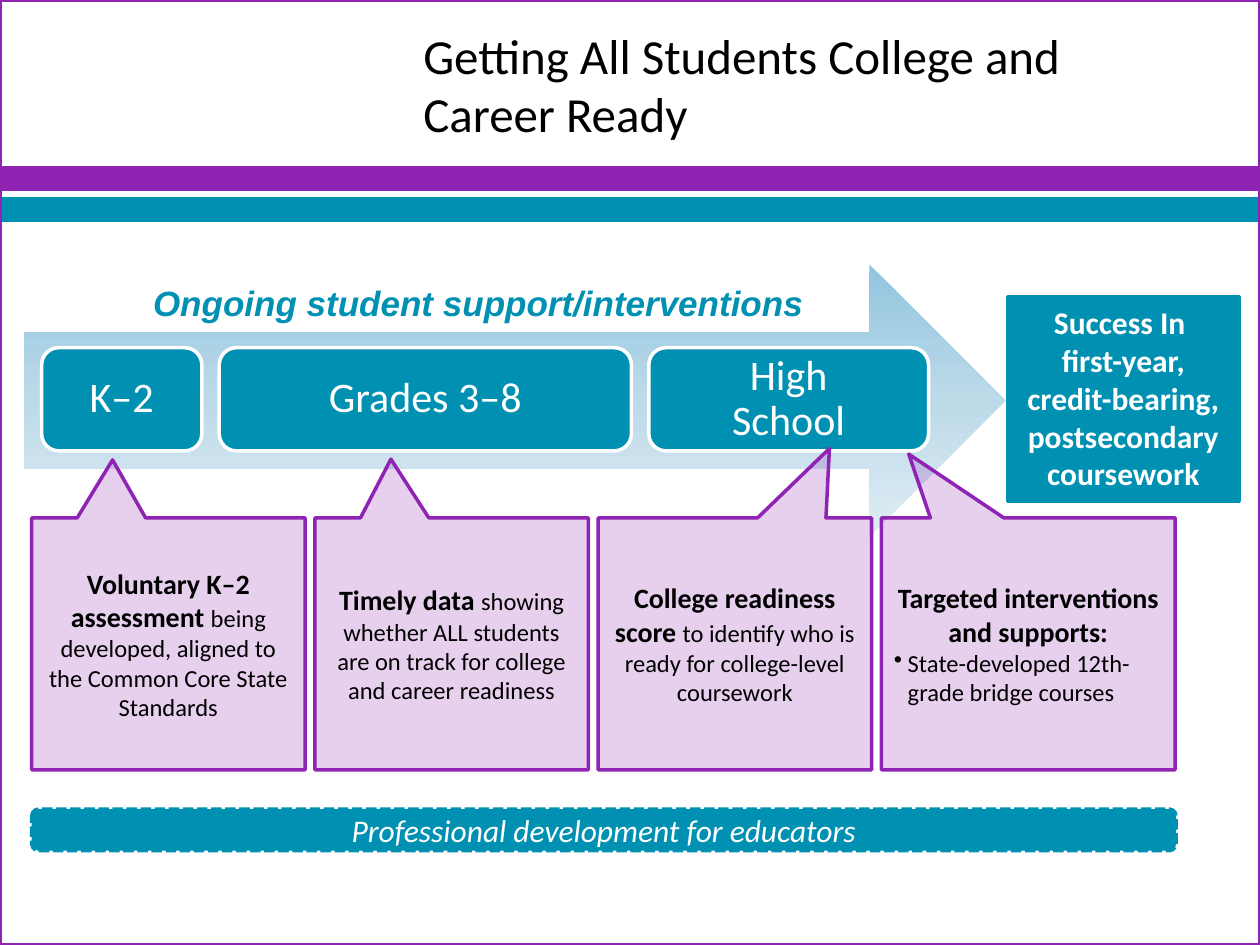
import copy
from collections import namedtuple

import lxml.etree
import pptx
import pptx.dml.color
import pptx.enum.dml
import pptx.enum.shapes
import pptx.enum.text
import pptx.oxml.ns
import pptx.util

Cm = pptx.util.Cm
Pt = pptx.util.Pt
RGB = pptx.dml.color.RGBColor
SHAPE = pptx.enum.shapes.MSO_SHAPE
ALIGN = pptx.enum.text.PP_ALIGN
ANCHOR = pptx.enum.text.MSO_ANCHOR
AUTO_SIZE = pptx.enum.text.MSO_AUTO_SIZE
qn = pptx.oxml.ns.qn

PURPLE = RGB(0x8F, 0x23, 0xB3)
TEAL = RGB(0x00, 0x91, 0xB2)
WHITE = RGB(0xFF, 0xFF, 0xFF)
BLACK = RGB(0x00, 0x00, 0x00)
ARROW_STOPS = [
    (0, RGB(0x91, 0xC5, 0xDF)),
    (0.5, RGB(0xBD, 0xDA, 0xE9)),
    (1, RGB(0xDF, 0xEC, 0xF4)),
]

Box = namedtuple("Box", "left top width height")

TITLE = dict(name="Calibri", size=Pt(28), bold=False, color=BLACK)
STAGE = dict(name="Calibri", size=Pt(24), color=WHITE)
LEAD = dict(name="Calibri", size=Pt(16), bold=True, color=BLACK)
DETAIL = dict(name="Calibri", size=Pt(14), bold=False, color=BLACK)
OUTCOME = dict(name="Calibri", size=Pt(18), bold=True, color=WHITE)
SUPPORT = dict(name="Arial", size=Pt(20), bold=True, italic=True, color=TEAL)
DEVELOPMENT = dict(name="Calibri", size=Pt(18), italic=True, color=WHITE)

STAGES = [("K–2", 3.23), ("Grades 3–8", 8.31), ("High\vSchool", 5.64)]
CALLOUTS = [
    (5.51, (-0.204, -0.73), "Voluntary K–2 assessment ",
     "being developed, aligned to the Common Core State Standards", False),
    (5.51, (-0.222, -0.733), "Timely data ",
     "showing whether ALL students are on track for college and career readiness", False),
    (5.51, (0.346, -0.775), "College readiness score ",
     "to identify who is ready for college-level coursework", False),
    (5.92, (-0.407, -0.753), "Targeted interventions and supports:",
     "State-developed 12th-grade bridge courses", True),
]


def apply_formats(target, formats):
    for name, value in formats.items():
        if name == "color":
            target.color.rgb = value
        else:
            setattr(target, name, value)


def place(item, box):
    apply_formats(item, {side: Cm(value) for side, value in box._asdict().items()})


def write(paragraph, text, font, **formats):
    for position, line in enumerate(text.split("\v")):
        if position:
            paragraph.add_line_break()
        run = paragraph.add_run()
        run.text = line
        apply_formats(run.font, font)
    apply_formats(paragraph, formats)


def add_panel(slide, kind, box, fill=None, line=None, weight=2):
    panel = slide.shapes.add_shape(kind, *map(Cm, box))
    panel.shadow.inherit = False
    if fill is None:
        panel.fill.background()
    else:
        panel.fill.solid()
        panel.fill.fore_color.rgb = fill
    if line is None:
        panel.line.fill.background()
    else:
        panel.line.color.rgb = line
        panel.line.width = Pt(weight)
    apply_formats(panel.text_frame, dict(word_wrap=True, vertical_anchor=ANCHOR.MIDDLE))
    return panel


def add_header(slide, box):
    add_panel(slide, SHAPE.RECTANGLE, Box(box.left, 3.38, box.width, 0.43), PURPLE, PURPLE)
    add_panel(slide, SHAPE.RECTANGLE, Box(box.left, 4.01, box.width, 0.43), TEAL, TEAL)
    add_panel(slide, SHAPE.RECTANGLE, box, line=PURPLE, weight=2.25)
    title = slide.shapes.title
    place(title, Box(box.left + 7.82, box.top, box.width - 7.82, 3.38))
    apply_formats(title.text_frame, dict(
        word_wrap=True, auto_size=AUTO_SIZE.NONE, vertical_anchor=ANCHOR.MIDDLE))
    paragraph = title.text_frame.paragraphs[0]
    write(paragraph, "Getting All Students College and \vCareer Ready", TITLE,
          alignment=ALIGN.LEFT)
    indent_paragraph(paragraph, Cm(0.46), 0)


def indent_paragraph(paragraph, margin, indent):
    properties = paragraph._p.get_or_add_pPr()
    properties.set("marL", str(int(margin)))
    properties.set("indent", str(int(indent)))
    return properties


def add_pathway(slide, box):
    arrow = add_panel(slide, SHAPE.RIGHT_ARROW, box)
    arrow.fill.gradient()
    arrow.fill.gradient_angle = 270
    stop_list = arrow.element.spPr.find(".//" + qn("a:gsLst"))
    stop_list.insert(1, copy.deepcopy(stop_list[0]))
    for stop, (position, color) in zip(arrow.fill.gradient_stops, ARROW_STOPS):
        apply_formats(stop, dict(position=position, color=color))

    left, gap = box.left + 0.36, 0.35
    for label, width in STAGES:
        stage = add_panel(slide, SHAPE.ROUNDED_RECTANGLE,
                          Box(left, box.top + 1.68, width, 2.08), TEAL, WHITE)
        write(stage.text_frame.paragraphs[0], label, STAGE,
              alignment=ALIGN.CENTER, line_spacing=0.9)
        left += width + gap

    support = slide.shapes.add_textbox(
        *map(Cm, Box(box.left + 0.59, box.top + 0.23, 17.15, 1.12)))
    support.text_frame.word_wrap = True
    write(support.text_frame.paragraphs[0], "Ongoing student support/interventions",
          SUPPORT, alignment=ALIGN.CENTER)


def add_outcome(slide, box):
    outcome = add_panel(slide, SHAPE.RECTANGLE, box, TEAL, TEAL, 2.25)
    outcome.text_frame.vertical_anchor = ANCHOR.TOP
    write(outcome.text_frame.paragraphs[0],
          "Success In \vfirst-year, credit-bearing, postsecondary coursework",
          OUTCOME, alignment=ALIGN.CENTER)


def add_callouts(slide, box):
    left, gap = box.left, 0.2
    for width, pointer, lead, detail, bulleted in CALLOUTS:
        callout = add_panel(slide, SHAPE.RECTANGULAR_CALLOUT,
                            Box(left, box.top, width, box.height), PURPLE, PURPLE)
        for index, offset in enumerate(pointer):
            callout.adjustments[index] = offset
        color = callout.element.spPr.find(qn("a:solidFill"))[0]
        lxml.etree.SubElement(color, qn("a:alpha")).set("val", "21000")
        paragraph = callout.text_frame.paragraphs[0]
        write(paragraph, lead, LEAD, alignment=ALIGN.CENTER)
        if bulleted:
            paragraph = callout.text_frame.add_paragraph()
            properties = indent_paragraph(paragraph, Cm(0.28), Cm(-0.28))
            lxml.etree.SubElement(properties, qn("a:buChar")).set("char", "•")
        write(paragraph, detail, DETAIL,
              alignment=ALIGN.LEFT if bulleted else ALIGN.CENTER)
        left += width + gap


def add_development(slide, box):
    development = add_panel(slide, SHAPE.ROUNDED_RECTANGLE, box, TEAL, TEAL)
    development.line.dash_style = pptx.enum.dml.MSO_LINE.SQUARE_DOT
    write(development.text_frame.paragraphs[0], "Professional development for educators",
          DEVELOPMENT, alignment=ALIGN.CENTER)


def main():
    deck = pptx.Presentation()
    deck.slide_width, deck.slide_height = Cm(25.4), Cm(19.05)
    slide = deck.slides.add_slide(deck.slide_layouts.get_by_name("Title Only"))
    add_header(slide, Box(0, 0, 25.4, 19.05))
    add_pathway(slide, Box(0.48, 5.33, 19.79, 5.49))
    add_outcome(slide, Box(20.32, 5.99, 4.65, 4.11))
    add_callouts(slide, Box(0.64, 10.44, 23.07, 5.08))
    add_development(slide, Box(0.64, 16.31, 23.07, 0.84))
    deck.save("out.pptx")


if __name__ == "__main__":
    main()
